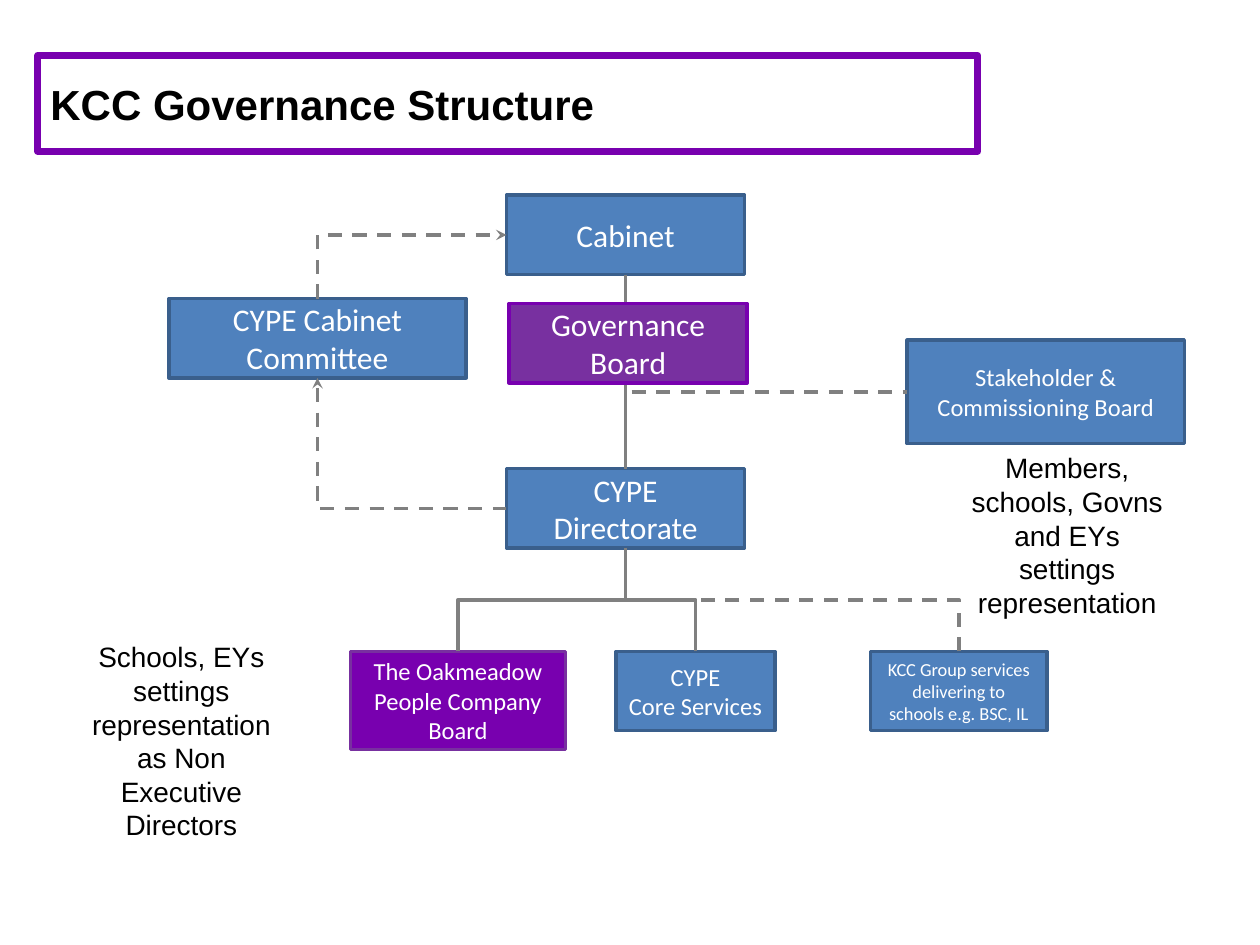
from dataclasses import dataclass

from lxml import etree
from pptx import Presentation
from pptx.dml.color import RGBColor
from pptx.enum.dml import MSO_LINE_DASH_STYLE as Dash
from pptx.enum.shapes import MSO_CONNECTOR as Connector, MSO_SHAPE as Shape
from pptx.enum.text import MSO_ANCHOR as Anchor, MSO_AUTO_SIZE as AutoSize, PP_ALIGN as Align
from pptx.oxml.ns import qn
from pptx.util import Inches, Pt

COLUMNS, ROWS = 100, 75
CELL = Inches(0.1)
BLUE, BLUE_EDGE = "4F81BD", "3A5F8C"
VIOLET, PURPLE = "7800AF", "7830A0"
GREY, WHITE, BLACK = "808080", "FFFFFF", "000000"


@dataclass
class Box:
    """A rectangle in grid cells, with the midpoints of its sides."""
    left: float
    top: float
    width: float
    height: float

    @property
    def head(self):
        return self.left + self.width / 2, self.top

    @property
    def foot(self):
        return self.left + self.width / 2, self.top + self.height

    @property
    def west(self):
        return self.left, self.top + self.height / 2

    def lengths(self):
        return [cells(v) for v in (self.left, self.top, self.width, self.height)]


# Rows and columns shared by the boxes of the chart
SPINE, SPINE_WIDTH, BOX_HEIGHT, SERVICES_TOP = 40.2, 18.9, 6.3, 51.7
TITLE = Box(3, 4.4, 74.6, 7.6)
CABINET = Box(SPINE, 15.5, SPINE_WIDTH, BOX_HEIGHT)
GOVERNANCE = Box(SPINE + 0.2, 24.1, SPINE_WIDTH, BOX_HEIGHT)
DIRECTORATE = Box(SPINE, 37.2, SPINE_WIDTH, BOX_HEIGHT)
COMMITTEE = Box(13.4, 23.7, 23.6, BOX_HEIGHT)
STAKEHOLDERS = Box(72, 27, 22, 8.2)
COMPANY = Box(27.8, SERVICES_TOP, 17.1, 7.8)
CORE = Box(48.9, SERVICES_TOP, 12.6, BOX_HEIGHT)
GROUP = Box(69.1, SERVICES_TOP, 14, BOX_HEIGHT)
MEMBERS_NOTE = Box(75.4, 35.3, 18.6, 11.8)
SCHOOLS_NOTE = Box(5.1, 50.3, 18.6, 14.5)


def cells(count):
    return round(count * CELL)


def color(hex_string):
    return RGBColor.from_string(hex_string)


def apply(target, formats):
    for name, value in formats.items():
        setattr(target, name, value)


def write(shape, lines, align, anchor, **font):
    frame = shape.text_frame
    apply(frame, dict(word_wrap=True, auto_size=AutoSize.NONE, vertical_anchor=anchor))
    frame.text = "\n".join(lines)
    hex_string = font.pop("color")
    for paragraph in frame.paragraphs:
        paragraph.alignment = align
        for run in paragraph.runs:
            apply(run.font, font)
            run.font.color.rgb = color(hex_string)


def outline(shape, hex_string, width):
    shape.line.color.rgb = color(hex_string)
    shape.line.width = Pt(width)


def add_title(slide, box, text):
    """Turn the title placeholder into a rounded frame."""
    title = slide.shapes.title
    apply(title, dict(zip(("left", "top", "width", "height"), box.lengths())))
    geometry = etree.Element(qn("a:prstGeom"), prst="roundRect")
    etree.SubElement(geometry, qn("a:avLst"))
    title._element.spPr.find(qn("a:xfrm")).addnext(geometry)
    title.fill.background()
    outline(title, VIOLET, 4)
    write(title, [text], Align.LEFT, Anchor.MIDDLE,
          name="Arial", size=Pt(24), bold=True, color=BLACK)


def add_unit(slide, box, lines, size=18, fill=BLUE, edge=BLUE_EDGE):
    unit = slide.shapes.add_shape(Shape.RECTANGLE, *box.lengths())
    unit.shadow.inherit = False
    unit.fill.solid()
    unit.fill.fore_color.rgb = color(fill)
    outline(unit, edge, 2)
    write(unit, lines, Align.CENTER, Anchor.MIDDLE,
          name="Calibri", size=Pt(size), color=WHITE)


def add_note(slide, box, text):
    note = slide.shapes.add_textbox(*box.lengths())
    write(note, [text], Align.CENTER, Anchor.TOP,
          name="Arial", size=Pt(16), color=BLACK)


def style_link(link, dashed, arrow):
    outline(link, GREY, 2)
    if dashed:
        link.line.dash_style = Dash.DASH
    if arrow:
        etree.SubElement(link.line._get_or_add_ln(), qn(f"a:{arrow}"), type="stealth")
    etree.SubElement(link._element.spPr, qn("a:effectLst"))


def add_straight(slide, start, end):
    points = [cells(v) for v in (*start, *end)]
    style_link(slide.shapes.add_connector(Connector.STRAIGHT, *points), False, None)


def add_elbow(slide, start, end, bends=1, dashed=False, arrow=None):
    """Link two points by a bent connector that leaves the start vertically."""
    dx, dy = end[0] - start[0], end[1] - start[1]
    middle_x, middle_y = start[0] + dx / 2, start[1] + dy / 2
    # The connector lies turned by a quarter, so its width spans the rows.
    left, top = middle_x - abs(dy) / 2, middle_y - abs(dx) / 2
    corners = (left, top, left + abs(dy), top + abs(dx))
    link = slide.shapes.add_connector(Connector.ELBOW, *map(cells, corners))
    rises_right = dx > 0 > dy
    frame = link._element.spPr.find(qn("a:xfrm"))
    frame.set("rot", str((90 if rises_right else 270) * 60000))
    frame.set("flipH", str(int(rises_right or dy > 0)))
    frame.set("flipV", str(int(rises_right or dx < 0)))
    link._element.spPr.find(qn("a:prstGeom")).set("prst", f"bentConnector{bends + 1}")
    style_link(link, dashed, arrow)


def add_boards(slide):
    """Upper part: cabinet, directorate and the boards between them."""
    add_unit(slide, CABINET, ["Cabinet"])
    add_unit(slide, DIRECTORATE, ["CYPE Directorate"])
    add_unit(slide, COMMITTEE, ["CYPE Cabinet Committee"])
    add_unit(slide, STAKEHOLDERS, ["Stakeholder & Commissioning Board"], 14)
    add_straight(slide, CABINET.foot, DIRECTORATE.head)
    add_elbow(slide, COMMITTEE.head, CABINET.west, dashed=True, arrow="tailEnd")
    add_elbow(slide, COMMITTEE.foot, DIRECTORATE.west, dashed=True, arrow="headEnd")
    add_elbow(slide, CABINET.foot, STAKEHOLDERS.west, dashed=True)
    add_unit(slide, GOVERNANCE, ["Governance Board"], fill=PURPLE, edge=VIOLET)
    add_note(slide, MEMBERS_NOTE, "Members, schools, Govns and EYs settings representation")


def add_services(slide):
    """Lower part: the services under the directorate."""
    add_unit(slide, COMPANY, ["The Oakmeadow People Company Board"], 14, VIOLET, PURPLE)
    add_unit(slide, CORE, ["CYPE", "Core Services"], 14)
    add_unit(slide, GROUP, ["KCC Group services delivering to schools e.g. BSC, IL"], 10.5)
    for box in (COMPANY, CORE, GROUP):
        add_elbow(slide, box.head, DIRECTORATE.foot, bends=2, dashed=box is GROUP)
    add_note(slide, SCHOOLS_NOTE,
             "Schools, EYs settings representation as Non Executive Directors")


def main():
    presentation = Presentation()
    apply(presentation, dict(slide_width=COLUMNS * CELL, slide_height=ROWS * CELL))
    slide = presentation.slides.add_slide(presentation.slide_layouts.get_by_name("Title Only"))
    add_title(slide, TITLE, "KCC Governance Structure")
    add_boards(slide)
    add_services(slide)
    presentation.save("out.pptx")


if __name__ == "__main__":
    main()
